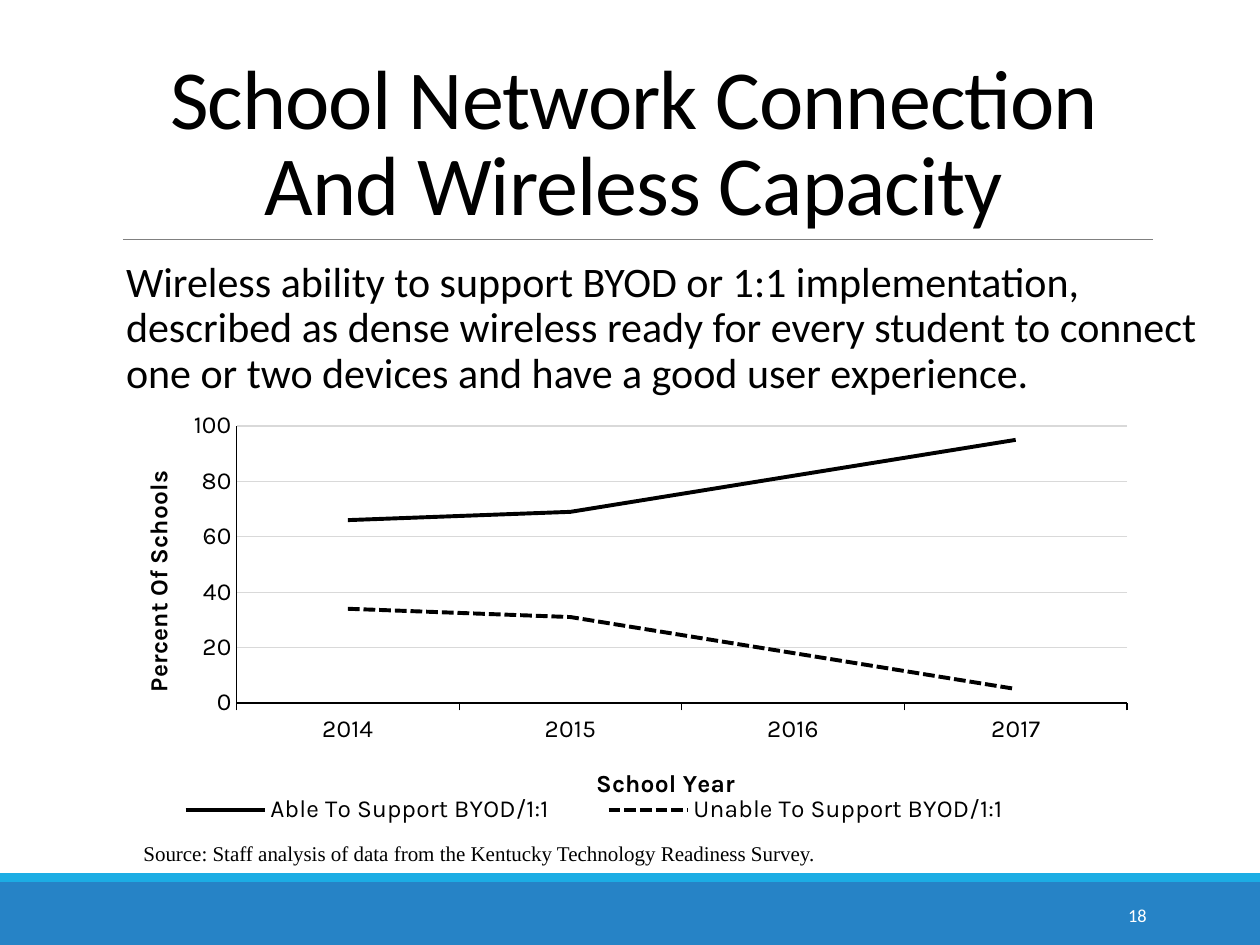
from dataclasses import dataclass

from pptx import Presentation
from pptx.chart.data import CategoryChartData
from pptx.dml.color import RGBColor
from pptx.enum.chart import XL_CHART_TYPE, XL_LEGEND_POSITION, XL_TICK_MARK
from pptx.enum.dml import MSO_LINE
from pptx.enum.shapes import MSO_CONNECTOR, MSO_SHAPE
from pptx.enum.text import MSO_ANCHOR, MSO_AUTO_SIZE, PP_ALIGN
from pptx.oxml import parse_xml
from pptx.oxml.ns import nsdecls, qn
from pptx.util import Emu, Pt

SCALE = 914400 / 126


@dataclass
class Box:
    x: int
    y: int
    w: int
    h: int

    def emu(self) -> list[Emu]:
        return [px(v) for v in (self.x, self.y, self.w, self.h)]


@dataclass
class Band:
    box: Box
    color: str


@dataclass
class Trend:
    name: str
    values: tuple[int, ...]
    dash: MSO_LINE


CHART = Box(52, 394, 1086, 471)
BANDS = [Band(Box(0, 882, 1260, 63), "2683C6"),
         Band(Box(0, 873, 1260, 9), "1CADE4")]
TRENDS = [Trend("Able To Support BYOD/1:1", (66, 69, 82, 95), MSO_LINE.SOLID),
          Trend("Unable To Support BYOD/1:1", (34, 31, 18, 5), MSO_LINE.SQUARE_DOT)]


def px(n: int) -> Emu:
    return Emu(round(n * SCALE))


def rgb(code: str) -> RGBColor:
    return RGBColor.from_string(code)


def style(font, face: str, size: float, color: str = "000000", bold: bool = False) -> None:
    font.name, font.size, font.bold = face, Pt(size), bold
    font.color.rgb = rgb(color)


def stroke(line, color: str, width: float) -> None:
    line.color.rgb = rgb(color)
    line.width = Pt(width)


def move(shape, box: Box) -> None:
    shape.left, shape.top, shape.width, shape.height = box.emu()


def write(shape, text: str, face: str, size: float, color: str = "000000"):
    frame = shape.text_frame
    frame.word_wrap = True
    frame.auto_size = MSO_AUTO_SIZE.NONE
    frame.text = text
    for run in frame.paragraphs[0].runs:
        style(run.font, face, size, color)
    return frame.paragraphs[0]


def draw_band(slide, band: Band) -> None:
    shape = slide.shapes.add_shape(MSO_SHAPE.RECTANGLE, *band.box.emu())
    shape.shadow.inherit = False
    shape.fill.solid()
    shape.fill.fore_color.rgb = rgb(band.color)
    shape.line.fill.background()


def layout(box: Box, sized: bool = True, inner: bool = False):
    """Chart layout for a box given in slide px."""
    parts = {"x": (box.x - CHART.x) / CHART.w, "y": (box.y - CHART.y) / CHART.h}
    if sized:
        parts |= {"w": box.w / CHART.w, "h": box.h / CHART.h}
    target = '<c:layoutTarget val="inner"/>' if inner else ""
    modes = "".join(f'<c:{k}Mode val="edge"/>' for k in "xy")
    spots = "".join(f'<c:{k} val="{v:.3f}"/>' for k, v in parts.items())
    return parse_xml(f'<c:layout {nsdecls("c")}><c:manualLayout>{target}{modes}{spots}'
                     '</c:manualLayout></c:layout>')


def place(node, new) -> None:
    """Swap in a layout, which sits just before c:overlay or first of all."""
    for old in node.findall(qn("c:layout")):
        node.remove(old)
    over = node.find(qn("c:overlay"))
    if over is None:
        node.insert(0, new)
    else:
        over.addprevious(new)


def set_axis(axis, title: str, spot: Box, tick: XL_TICK_MARK) -> None:
    axis.has_title = True
    frame = axis.axis_title.text_frame
    frame.text = title
    style(frame.paragraphs[0].runs[0].font, "Karla", 14, bold=True)
    place(axis.axis_title._element, layout(spot, sized=False))
    axis.major_tick_mark, axis.minor_tick_mark = tick, XL_TICK_MARK.NONE
    style(axis.tick_labels.font, "Karla", 14)
    stroke(axis.format.line, "000000", 0.75)


def draw_chart(slide) -> None:
    data = CategoryChartData()
    data.categories = ["2014", "2015", "2016", "2017"]
    for trend in TRENDS:
        data.add_series(trend.name, trend.values)
    chart = slide.shapes.add_chart(XL_CHART_TYPE.LINE, *CHART.emu(), data).chart
    style(chart.font, "Karla", 10)
    chart.has_title = False
    plot = chart.plots[0]
    plot.vary_by_categories = False
    for line, trend in zip(plot.series, TRENDS):
        line.smooth = False
        stroke(line.format.line, "000000", 2.25)
        line.format.line.dash_style = trend.dash

    set_axis(chart.category_axis, "School Year", Box(592, 763, 0, 0), XL_TICK_MARK.OUTSIDE)
    scale = chart.value_axis
    set_axis(scale, "Percent Of Schools", Box(138, 466, 0, 0), XL_TICK_MARK.NONE)
    scale.minimum_scale, scale.maximum_scale, scale.major_unit = 0, 100, 20
    scale.has_major_gridlines = True
    stroke(scale.major_gridlines.format.line, "D9D9D9", 0.75)

    chart.has_legend = True
    key = chart.legend
    key.position = XL_LEGEND_POSITION.BOTTOM
    key.include_in_layout = False
    style(key.font, "Karla", 14)
    place(key._element, layout(Box(134, 794, 920, 32)))
    area = chart._chartSpace.find(".//" + qn("c:plotArea"))
    place(area, layout(Box(237, 426, 890, 277), inner=True))


def main() -> None:
    deck = Presentation()
    deck.slide_width, deck.slide_height = px(1260), px(945)
    slide = deck.slides.add_slide(deck.slide_layouts[1])

    # Footer bands and title rule
    for band in BANDS:
        draw_band(slide, band)
    rule = slide.shapes.add_connector(MSO_CONNECTOR.STRAIGHT, px(123), px(239), px(1153), px(239))
    stroke(rule.line, "808080", 0.5)
    rule._element.spPr.append(parse_xml(f'<a:effectLst {nsdecls("a")}/>'))

    # Title
    title = slide.shapes.title
    move(title, Box(-106, 39, 1498, 200))
    par = write(title, "School Network Connection \vAnd Wireless Capacity ", "Calibri", 48)
    title.text_frame.vertical_anchor = MSO_ANCHOR.BOTTOM
    par.alignment, par.line_spacing = PP_ALIGN.CENTER, 0.85
    for run in par.runs:
        run.font._element.set("spc", "-50")

    # Body
    body = slide.placeholders[1]
    move(body, Box(113, 255, 1086, 554))
    par = write(body, "Wireless ability to support BYOD or 1:1 implementation, described as dense "
                "wireless ready for every student to connect one or two devices and have a "
                "good user experience.", "Calibri", 24)
    body.text_frame.margin_left = body.text_frame.margin_right = 0
    par.line_spacing, par.space_before, par.space_after = 0.9, Pt(12), Pt(2)
    props = par._p.get_or_add_pPr()
    props.set("marL", str(px(13)))
    props.set("indent", str(px(-13)))
    props.append(parse_xml(f'<a:buClr {nsdecls("a")}><a:srgbClr val="1CADE4"/></a:buClr>'))
    props.append(parse_xml(f'<a:buChar {nsdecls("a")} char=" "/>'))

    # Page number
    page = slide.shapes.add_textbox(*Box(1023, 890, 136, 50).emu())
    par = write(page, "18", "Calibri", 10.5, "FFFFFF")
    par.alignment = PP_ALIGN.RIGHT
    page.text_frame.vertical_anchor = MSO_ANCHOR.MIDDLE

    # Chart and source
    draw_chart(slide)
    note = slide.shapes.add_textbox(*Box(131, 834, 1086, 38).emu())
    write(note, "Source: Staff analysis of data from the Kentucky Technology Readiness Survey.",
          "Times New Roman", 12)
    deck.save("out.pptx")


if __name__ == "__main__":
    main()
